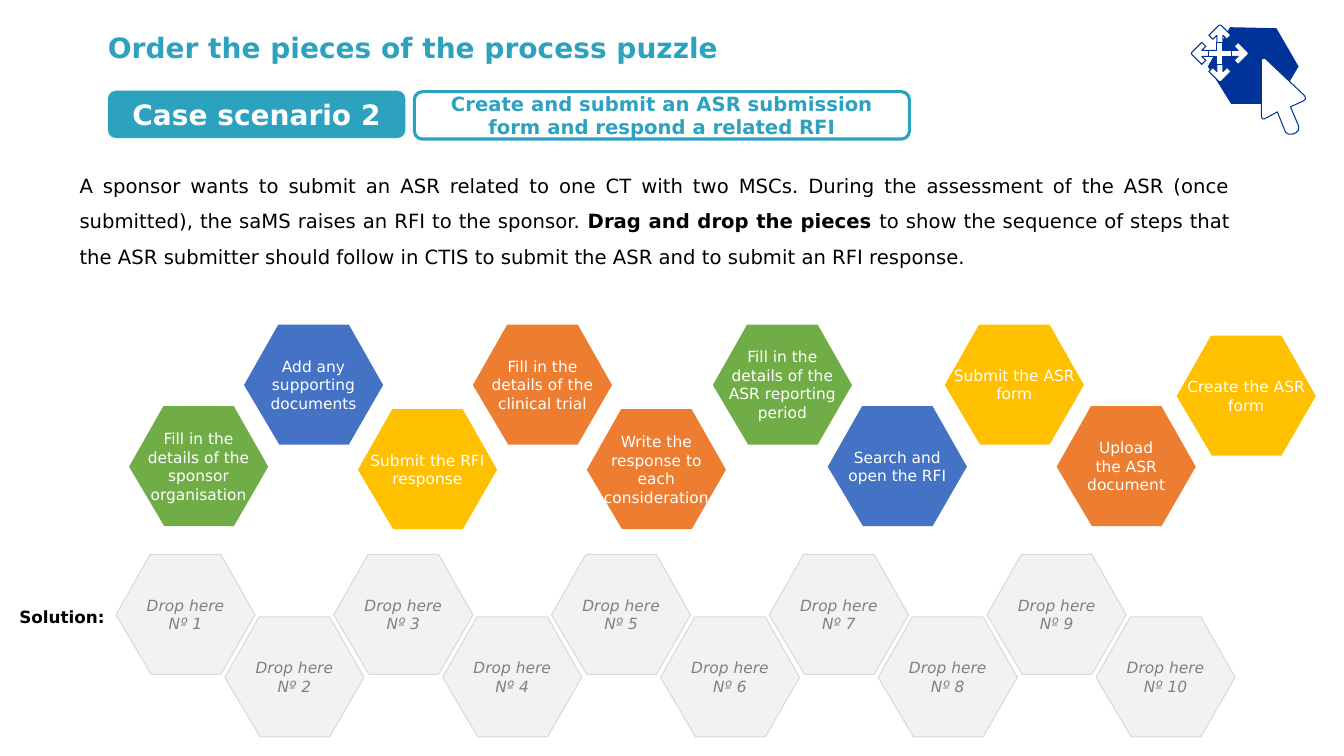
import dataclasses
import typing

import pptx
import pptx.dml.color
import pptx.enum.shapes
import pptx.enum.text
import pptx.util

Inches = pptx.util.Inches
Align = pptx.enum.text.PP_ALIGN
Anchor = pptx.enum.text.MSO_ANCHOR
Point = tuple[float, float]

COLORS = {
    "teal": "2DA2BF", "navy": "003399", "white": "FFFFFF", "black": "000000",
    "pale": "F2F2F2", "edge": "D9D9D9", "gray": "808080",
    "green": "70AD47", "orange": "ED7D31", "gold": "FFC000", "blue": "4472C4",
}
FONT = "DejaVu Sans"
HEX = [(0.34, 0), (1.04, 0), (1.38, 0.6), (1.04, 1.19), (0.35, 1.19), (0, 0.6)]
HEX_PAD = {"margin_left": Inches(0.08), "margin_right": Inches(0.08)}


@dataclasses.dataclass
class Style:
    size: float
    color: str
    bold: bool = False
    italic: bool = False
    align: typing.Any = Align.CENTER


@dataclasses.dataclass
class Tile:
    left: float
    top: float
    text: str
    fill: str
    style: Style
    line: str | None = None


@dataclasses.dataclass
class Label:
    box: tuple[float, float, float, float]
    text: str
    style: Style
    fill: str | None = None
    line: str | None = None


@dataclasses.dataclass
class Outline:
    points: list[Point]
    fill: str
    line: str | None = None
    width: float = 0


def rgb(name: str) -> pptx.dml.color.RGBColor:
    return pptx.dml.color.RGBColor.from_string(COLORS[name])


def apply(target: typing.Any, values: dict[str, typing.Any]) -> None:
    for key, value in values.items():
        setattr(target, key, value)


def place(shape: typing.Any, box: tuple[float, float, float, float]) -> None:
    apply(shape, dict(zip(("left", "top", "width", "height"), map(Inches, box))))


def paint(shape: typing.Any, fill: str | None, line: str | None, width: float) -> None:
    shape.shadow.inherit = False
    if fill:
        shape.fill.solid()
        shape.fill.fore_color.rgb = rgb(fill)
    else:
        shape.fill.background()
    if line:
        shape.line.color.rgb = rgb(line)
        shape.line.width = pptx.util.Pt(width)
    else:
        shape.line.fill.background()


def add_run(para: typing.Any, text: str, style: Style) -> None:
    run = para.add_run()
    run.text = text
    apply(run.font, {"name": FONT, "size": pptx.util.Pt(style.size),
                     "bold": style.bold, "italic": style.italic})
    run.font.color.rgb = rgb(style.color)


def write(shape: typing.Any, text: str, style: Style, **frame: typing.Any) -> None:
    body = shape.text_frame
    apply(body, {"word_wrap": True, "vertical_anchor": Anchor.MIDDLE,
                 "auto_size": pptx.enum.text.MSO_AUTO_SIZE.NONE, **frame})
    for i, line in enumerate(text.split("\n")):
        para = body.add_paragraph() if i else body.paragraphs[0]
        para.alignment = style.align
        add_run(para, line, style)


def draw_shape(shapes: typing.Any, item: Outline) -> typing.Any:
    dots = [(Inches(x), Inches(y)) for x, y in item.points]
    pen = shapes.build_freeform(*dots[0], scale=1.0)
    pen.add_line_segments(dots[1:], close=True)
    shape = pen.convert_to_shape()
    paint(shape, item.fill, item.line, item.width)
    return shape


def draw_tile(shapes: typing.Any, tile: Tile) -> None:
    points = [(tile.left + x, tile.top + y) for x, y in HEX]
    shape = draw_shape(shapes, Outline(points, tile.fill, tile.line, 0.75))
    write(shape, tile.text, tile.style, **HEX_PAD)


def draw_label(shapes: typing.Any, label: Label) -> None:
    kind = pptx.enum.shapes.MSO_SHAPE.ROUNDED_RECTANGLE
    shape = shapes.add_shape(kind, *map(Inches, label.box))
    paint(shape, label.fill, label.line, 2.25)
    write(shape, label.text, label.style)


def spin(arm: list[Point], x: float, y: float) -> list[Point]:
    """Turn one arm by quarter turns around a centre."""
    points = []
    for _ in range(4):
        points += [(x + dx, y + dy) for dx, dy in arm]
        arm = [(-dy, dx) for dx, dy in arm]
    return points


STEP = Style(11, "white")
DROP = Style(11, "gray", italic=True)

LABELS = [
    Label((1.07, 0.9, 2.95, 0.47), "Case scenario 2", Style(20, "white", True), "teal"),
    Label((4.11, 0.91, 4.91, 0.47),
          "Create and submit an ASR submission form and respond a related RFI",
          Style(14, "teal", True), line="teal"),
    Label((-0.05, 5.77, 1.33, 0.7), "Solution:", Style(12, "black", True)),
]
STEPS = [
    Tile(1.28, 4.03, "Fill in the details of the sponsor organisation", "green", STEP),
    Tile(2.42, 3.22, "Add any supporting documents", "blue", STEP),
    Tile(3.55, 4.06, "Submit the RFI response", "gold", STEP),
    Tile(4.69, 3.22, "Fill in the details of the clinical trial", "orange", STEP),
    Tile(5.82, 4.06, "Write the response to each consideration", "orange", STEP),
    Tile(7.07, 3.22, "Fill in the details of the ASR reporting period", "green", STEP),
    Tile(8.21, 4.03, "Search and open the RFI", "blue", STEP),
    Tile(9.37, 3.22, "Submit the ASR form", "gold", STEP),
    Tile(10.48, 4.03, "Upload\nthe ASR document", "orange", STEP),
    Tile(11.67, 3.33, "Create the ASR form", "gold", STEP),
]
DROPS = [
    Tile(1.15 + 1.08 * i, 6.12 if i % 2 else 5.5, f"Drop here\nNº {i + 1}",
         "pale", DROP, "edge")
    for i in range(10)
]

ARROW = [(0.03, -0.03), (0.18, -0.03), (0.14, -0.07), (0.18, -0.11), (0.28, -0.01),
         (0.28, 0.01), (0.18, 0.11), (0.14, 0.07), (0.18, 0.03)]
CROSS = [(0.03, -0.03), (0.11, -0.03), (0.11, 0.03)]
CURSOR = [(12.52, 0.58), (12.55, 0.58), (12.94, 0.95), (12.95, 0.98), (12.93, 1.0),
          (12.8, 1.06), (12.88, 1.25), (12.88, 1.29), (12.85, 1.32), (12.82, 1.33),
          (12.78, 1.33), (12.75, 1.31), (12.67, 1.11), (12.54, 1.18), (12.52, 1.18),
          (12.51, 1.15), (12.51, 0.6)]
ICON = [
    Outline([(12.2, 0.27), (12.66, 0.28), (12.88, 0.66), (12.66, 1.03),
             (12.21, 1.03), (11.98, 0.66)], "navy"),
    Outline(spin(ARROW, 12.1, 0.53), "white", "navy"),
    Outline(spin(CROSS, 12.1, 0.53), "white", "navy"),
    Outline(CURSOR, "white", "navy", 0.75),
]

BODY = [
    ("A sponsor wants to submit an ASR related to one CT with two MSCs. During the "
     "assessment of the ASR (once submitted), the saMS raises an RFI to the sponsor. ", False),
    ("Drag and drop the pieces ", True),
    ("to show the sequence of steps that the ASR submitter should follow in CTIS to "
     "submit the ASR and to submit an RFI response.", False),
]


def main() -> None:
    deck = pptx.Presentation()
    apply(deck, {"slide_width": Inches(13.33), "slide_height": Inches(7.5)})
    slide = deck.slides.add_slide(deck.slide_layouts[5])
    shapes = slide.shapes

    # Title
    place(shapes.title, (0.97, 0.25, 6.74, 0.44))
    write(shapes.title, "Order the pieces of the process puzzle",
          Style(20, "teal", True, align=Align.LEFT), vertical_anchor=Anchor.TOP)

    # Drag icon
    for part in ICON:
        draw_shape(shapes, part)

    # Scenario and solution labels
    for label in LABELS:
        draw_label(shapes, label)

    # Puzzle pieces and drop places
    for tile in DROPS + STEPS:
        draw_tile(shapes, tile)

    # Task text
    task = shapes.add_textbox(*map(Inches, (0.69, 1.56, 11.61, 1.11)))
    task.text_frame.word_wrap = True
    para = task.text_frame.paragraphs[0]
    apply(para, {"alignment": Align.JUSTIFY, "line_spacing": 1.5})
    for text, bold in BODY:
        add_run(para, text, Style(14, "black", bold))

    deck.save("out.pptx")


if __name__ == "__main__":
    main()
